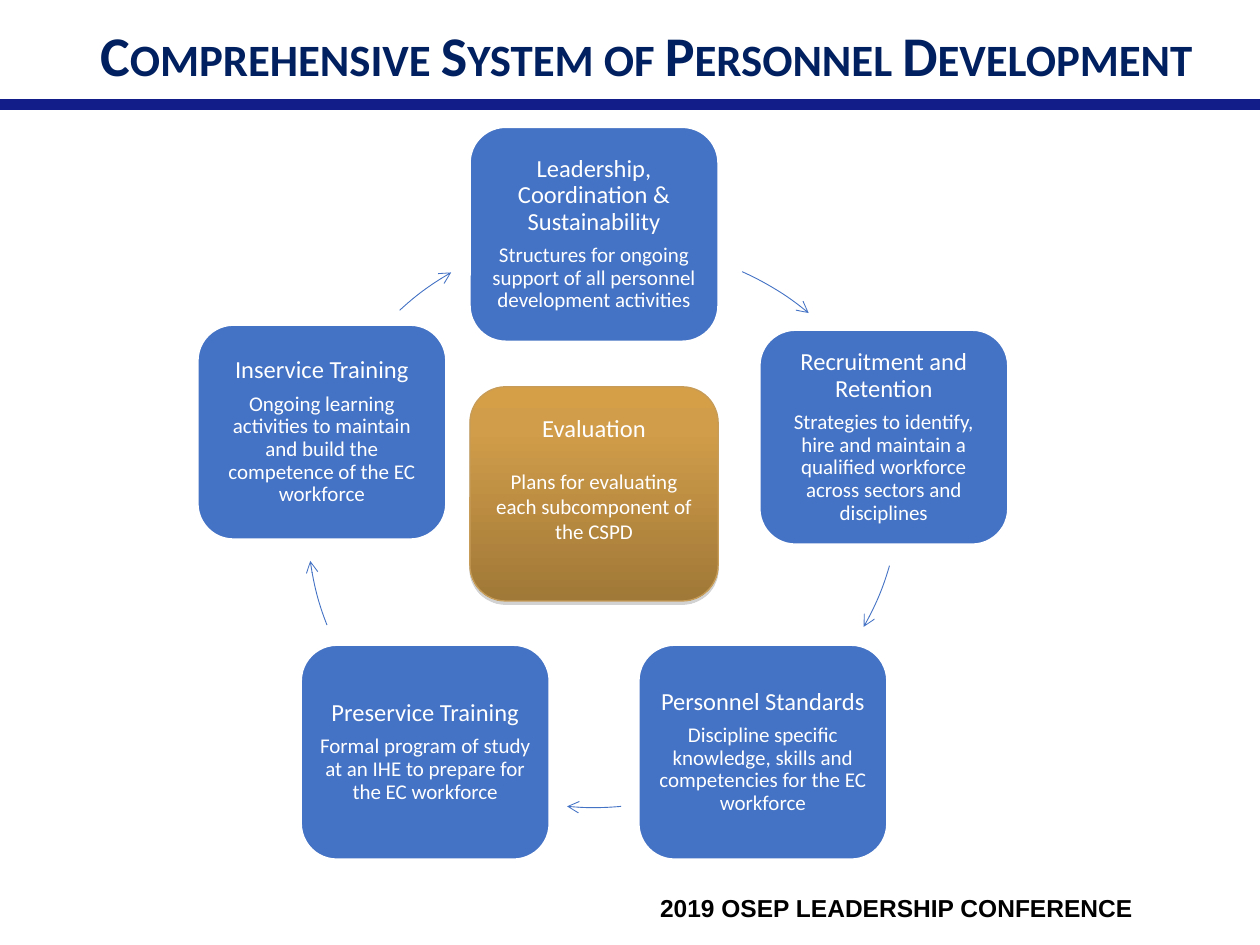
from typing import NamedTuple

from lxml import etree
from pptx import Presentation
from pptx.dml.color import RGBColor
from pptx.enum.shapes import MSO_CONNECTOR, MSO_SHAPE
from pptx.enum.text import MSO_ANCHOR, MSO_AUTO_SIZE, PP_ALIGN
from pptx.oxml import parse_xml
from pptx.oxml.ns import qn
from pptx.util import Inches, Pt

ROUNDED, ARC = MSO_SHAPE.ROUNDED_RECTANGLE, MSO_SHAPE.ARC
STRAIGHT = MSO_CONNECTOR.STRAIGHT
CENTER, RIGHT = PP_ALIGN.CENTER, PP_ALIGN.RIGHT
TOP, MIDDLE = MSO_ANCHOR.TOP, MSO_ANCHOR.MIDDLE

COLUMNS, ROWS = 100, 75
SLIDE_WIDTH, SLIDE_HEIGHT = Inches(10), Inches(7.5)
BOX_WIDTH, BOX_HEIGHT = 19.7, 17
ARC_SIZE = 45.5
BLUE, WHITE, NAVY, RULE_BLUE, BLACK = "4472C4", "FFFFFF", "002060", "121D89", "000000"
GOLD_STOPS = ((0, "D59F48"), (20, "D19D4A"), (100, "A07837"))
GOLD_LINE = "C69C58"
NAMESPACE = 'xmlns:a="http://schemas.openxmlformats.org/drawingml/2006/main"'


class Component(NamedTuple):
    column: float
    row: float
    heading: str
    detail: str


class CycleArrow(NamedTuple):
    column: float
    row: float
    start_angle: float
    end_angle: float


COMPONENTS = (
    Component(37.3, 10.1, "Leadership, Coordination & Sustainability",
              "Structures for ongoing support of all personnel development activities"),
    Component(60.3, 26.2, "Recruitment and Retention",
              "Strategies to identify, hire and maintain a qualified workforce "
              "across sectors and disciplines"),
    Component(50.7, 51.2, "Personnel Standards",
              "Discipline specific knowledge, skills and competencies for the EC workforce"),
    Component(23.9, 51.2, "Preservice Training",
              "Formal program of study at an IHE to prepare for the EC workforce"),
    Component(15.7, 25.8, "Inservice Training",
              "Ongoing learning activities to maintain and build the competence "
              "of the EC workforce"),
)
EVALUATION = Component(37.3, 30.7, "Evaluation",
                       "Plans for evaluating each subcomponent of the CSPD")
CYCLE_ARROWS = (
    CycleArrow(26.9, 19.6, 294, 309.7),
    CycleArrow(26, 15.8, 16.2, 29.5),
    CycleArrow(24.4, 18.6, 84.6, 95.4),
    CycleArrow(24.4, 18.6, 158.7, 172),
    CycleArrow(24.4, 18.6, 227.3, 240.1),
)


def across(columns: float) -> int:
    return round(SLIDE_WIDTH * columns / COLUMNS)


def down(rows: float) -> int:
    return round(SLIDE_HEIGHT * rows / ROWS)


def area(column: float, row: float, width: float, height: float) -> tuple:
    return across(column), down(row), across(width), down(height)


def color(value: str) -> RGBColor:
    return RGBColor.from_string(value)


def set_line(shape, value: str, width: float) -> None:
    shape.line.color.rgb = color(value)
    shape.line.width = Pt(width)


def write(paragraph, text: str, *, size: float, value: str = WHITE, font: str = "Calibri",
          bold: bool = False, small_caps: bool = False, align=CENTER,
          spacing: float = 1, before: float = 0, after: float = 0) -> None:
    paragraph.alignment = align
    paragraph.line_spacing = spacing
    paragraph.space_before = Pt(before)
    paragraph.space_after = Pt(after)
    run = paragraph.add_run()
    run.text = text
    run.font.size = Pt(size)
    run.font.name = font
    run.font.bold = bold
    run.font.color.rgb = color(value)
    if small_caps:
        run.font._element.set("cap", "small")


def set_frame(frame, anchor, inset: float = 1, bottom: float = 0.5) -> None:
    frame.word_wrap = True
    frame.auto_size = MSO_AUTO_SIZE.NONE
    frame.vertical_anchor = anchor
    frame.margin_left = frame.margin_right = across(inset)
    frame.margin_top = down(0.5)
    frame.margin_bottom = down(bottom)


def draw_component(slide, component: Component, *, spacing: float = 0.9, gap: float = 5,
                   inset: float = 0.6, bottom: float = 0.5):
    shape = slide.shapes.add_shape(
        ROUNDED, *area(component.column, component.row, BOX_WIDTH, BOX_HEIGHT))
    shape.shadow.inherit = False
    shape.fill.solid()
    shape.fill.fore_color.rgb = color(BLUE)
    set_line(shape, WHITE, 1)
    frame = shape.text_frame
    set_frame(frame, MIDDLE, inset, bottom)
    write(frame.paragraphs[0], component.heading, size=14, spacing=spacing)
    write(frame.add_paragraph(), component.detail, size=12, spacing=spacing, before=gap)
    return shape


def draw_evaluation(slide) -> None:
    shape = draw_component(slide, EVALUATION, spacing=1, gap=14.6, inset=1, bottom=2.9)
    set_line(shape, GOLD_LINE, 0.75)
    properties = shape._element.spPr
    stops = "".join(f'<a:gs pos="{position * 1000}"><a:srgbClr val="{value}"/></a:gs>'
                    for position, value in GOLD_STOPS)
    gradient = parse_xml(f'<a:gradFill {NAMESPACE} rotWithShape="1"><a:gsLst>{stops}</a:gsLst>'
                         '<a:lin ang="5400000" scaled="0"/></a:gradFill>')
    properties.replace(properties.find(qn("a:solidFill")), gradient)
    shadow = parse_xml(f'<a:outerShdw {NAMESPACE} blurRad="0" dist="{Pt(1.8)}" dir="5400000" '
                       'rotWithShape="0"><a:srgbClr val="808080"><a:alpha val="35000"/>'
                       '</a:srgbClr></a:outerShdw>')
    properties.find(qn("a:effectLst")).append(shadow)


def draw_cycle_arrow(slide, arrow: CycleArrow) -> None:
    shape = slide.shapes.add_shape(ARC, *area(arrow.column, arrow.row, ARC_SIZE, ARC_SIZE))
    shape.shadow.inherit = False
    shape.adjustments[0] = arrow.start_angle * 0.6
    shape.adjustments[1] = arrow.end_angle * 0.6
    shape.fill.background()
    set_line(shape, BLUE, 0.5)
    etree.SubElement(shape.line._get_or_add_ln(), qn("a:tailEnd"), type="arrow")


def draw_title(slide) -> None:
    title = slide.shapes.title
    title.left, title.top, title.width, title.height = area(1.3, 1.1, 100, 6.4)
    set_frame(title.text_frame, TOP)
    write(title.text_frame.paragraphs[0], "Comprehensive System of Personnel Development",
          size=32, value=NAVY, bold=True, small_caps=True, after=20)


def draw_footer(slide) -> None:
    footer = slide.shapes.add_textbox(*area(33.2, 70.4, 57.7, 3.4))
    set_frame(footer.text_frame, TOP)
    write(footer.text_frame.paragraphs[0], "2019 OSEP LEADERSHIP CONFERENCE",
          size=14, value=BLACK, font="Arial", bold=True, align=RIGHT)


def draw_rule(slide) -> None:
    rule = slide.shapes.add_connector(STRAIGHT, 0, down(8.3), SLIDE_WIDTH, down(8.3))
    set_line(rule, RULE_BLUE, 6)
    etree.SubElement(rule._element.spPr, qn("a:effectLst"))


def main() -> None:
    presentation = Presentation()
    presentation.slide_width, presentation.slide_height = SLIDE_WIDTH, SLIDE_HEIGHT
    slide = presentation.slides.add_slide(presentation.slide_layouts[5])
    draw_footer(slide)
    draw_title(slide)
    for component, arrow in zip(COMPONENTS, CYCLE_ARROWS):
        draw_component(slide, component)
        draw_cycle_arrow(slide, arrow)
    draw_evaluation(slide)
    draw_rule(slide)
    presentation.save("out.pptx")


if __name__ == "__main__":
    main()
